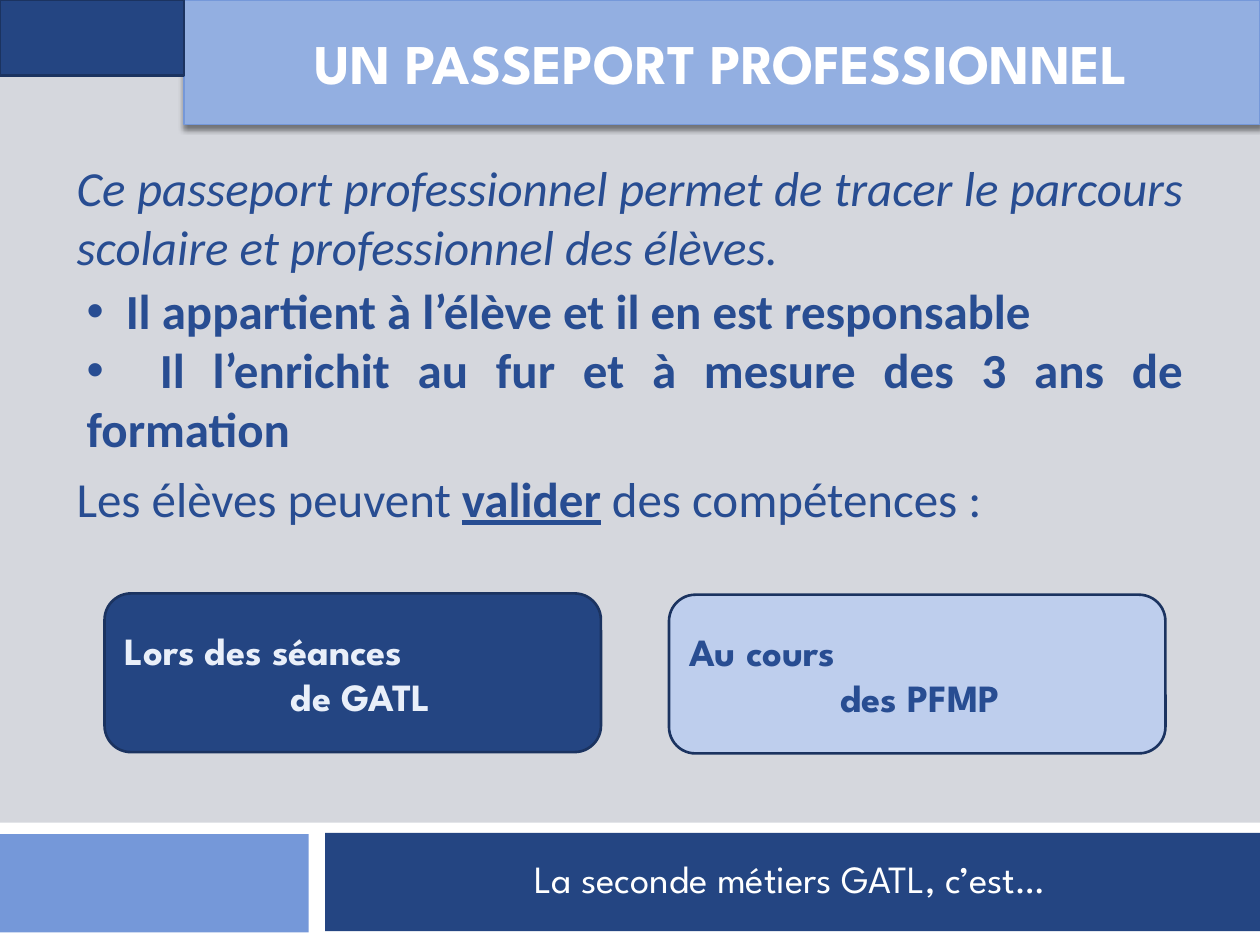
import pptx
import pptx.util
import pptx.dml.color
import pptx.enum.shapes
import pptx.enum.text
import pptx.oxml
import pptx.oxml.ns

RGBColor = pptx.dml.color.RGBColor
Shape = pptx.enum.shapes.MSO_SHAPE
Align = pptx.enum.text.PP_ALIGN
Anchor = pptx.enum.text.MSO_ANCHOR
Pt = pptx.util.Pt
Inches = pptx.util.Inches

WHITE = RGBColor(0xFF, 0xFF, 0xFF)
GREY = RGBColor(0xD5, 0xD7, 0xDD)
NAVY = RGBColor(0x24, 0x45, 0x82)
EDGE = RGBColor(0x1B, 0x33, 0x60)
INK = RGBColor(0x28, 0x4D, 0x92)
BLUE = RGBColor(0x75, 0x98, 0xD9)
SKY = RGBColor(0x93, 0xAF, 0xE1)
PALE = RGBColor(0xBE, 0xCE, 0xED)
MIST = RGBColor(0xE9, 0xEF, 0xF9)

BODY = {"name": "Calibri", "size": Pt(28), "color": INK}
HEAD = {"name": "League Spartan", "size": Pt(32), "color": WHITE, "bold": True}
LABEL = HEAD | {"size": Pt(22)}
FOOT = LABEL | {"bold": False}
NS = pptx.oxml.ns.nsdecls("a")
SHADOW = (f'<a:effectLst {NS}><a:outerShdw blurRad="38100" dist="30480" dir="5400000" rotWithShape="0">'
          '<a:srgbClr val="000000"><a:alpha val="45000"/></a:srgbClr></a:outerShdw></a:effectLst>')


class Deck:
    """Hold the current slide and its style on a grid of 100 columns by 75 rows."""

    def __init__(self):
        self.prs = pptx.Presentation()
        self.prs.slide_width, self.prs.slide_height = Inches(10), Inches(7.5)
        self.slide = self.prs.slides.add_slide(self.prs.slide_layouts[5])
        fill = self.slide.background.fill
        fill.solid()
        fill.fore_color.rgb = GREY

    def grid(self, *cells):
        """Turn columns and rows into lengths."""
        col, row = self.prs.slide_width / 100, self.prs.slide_height / 75
        return [round(n * unit) for n, unit in zip(cells, (col, row, col, row))]

    def paint(self, shape, fill, edge=None, width=1.5):
        """Fill and outline a shape."""
        shape.fill.solid()
        shape.fill.fore_color.rgb = fill
        if edge is None:
            shape.line.fill.background()
        else:
            shape.line.color.rgb = edge
            shape.line.width = Pt(width)

    def block(self, cells, fill, edge=None, kind=Shape.RECTANGLE):
        """Add a flat preset shape."""
        shape = self.slide.shapes.add_shape(kind, *self.grid(*cells))
        shape.shadow.inherit = False
        self.paint(shape, fill, edge)
        return shape

    def style(self, para, runs, align):
        """Add styled runs to a paragraph."""
        para.alignment = align
        for text, form in runs:
            run = para.add_run()
            run.text = text
            for key, value in form.items():
                if key == "color":
                    run.font.color.rgb = value
                else:
                    setattr(run.font, key, value)

    def title(self, cells, text):
        """Format the title placeholder as a banner."""
        shape = self.slide.shapes.title
        shape.left, shape.top, shape.width, shape.height = self.grid(*cells)
        self.paint(shape, SKY, BLUE, 0.79)
        shape._element.spPr.append(pptx.oxml.parse_xml(SHADOW))
        frame = shape.text_frame
        frame.vertical_anchor = Anchor.MIDDLE
        self.style(frame.paragraphs[0], [(text, HEAD)], Align.CENTER)

    def text(self, cells, runs, align=Align.JUSTIFY):
        """Add a wrapped text box with one paragraph."""
        frame = self.slide.shapes.add_textbox(*self.grid(*cells)).text_frame
        frame.word_wrap = True
        self.style(frame.paragraphs[0], runs, align)
        return frame

    def list(self, cells, items):
        """Add bulleted paragraphs, each with its own tab stop."""
        frame = self.text(cells, [])
        for i, (text, stop) in enumerate(items):
            para = frame.add_paragraph() if i else frame.paragraphs[0]
            self.style(para, [("\t" + text, BODY | {"bold": True})], Align.JUSTIFY)
            props = para._p.get_or_add_pPr()
            for xml in ('<a:buFont {} typeface="Arial"/>', '<a:buChar {} char="•"/>',
                        f'<a:tabLst {{}}><a:tab pos="{Inches(stop)}" algn="l"/></a:tabLst>'):
                props.append(pptx.oxml.parse_xml(xml.format(NS)))

    def card(self, cells, fill, color, lines, step):
        """Add a rounded card whose second line is indented."""
        frame = self.block(cells, fill, EDGE, Shape.ROUNDED_RECTANGLE).text_frame
        frame.vertical_anchor = Anchor.MIDDLE
        for i, line in enumerate(lines):
            para = frame.add_paragraph() if i else frame.paragraphs[0]
            self.style(para, [(line, LABEL | {"color": color})], Align.LEFT)
            para._p.get_or_add_pPr().set("marL", str(Inches(step * i)))


def main():
    """Build the slide."""
    deck = Deck()
    for cells, fill in (((0, 65.3, 100, 9.7), WHITE), ((0, 66.2, 24.5, 7.8), BLUE),
                        ((25.8, 66.1, 74.2, 7.8), NAVY)):
        deck.block(cells, fill)
    deck.block((0, 0, 14.6, 6), NAVY, EDGE)
    deck.title((14.6, 0, 85.4, 9.9), "UN PASSEPORT PROFESSIONNEL")
    intro = "Ce passeport professionnel permet de tracer le parcours scolaire et professionnel des élèves."
    frame = deck.text((5.1, 13.9, 89.8, 11), [(intro, BODY | {"italic": True})])
    frame.vertical_anchor = Anchor.MIDDLE
    frame.margin_bottom = Inches(0.5)
    deck.list((5.9, 21.8, 89, 19.9), [
        ("Il appartient à l’élève et il en est responsable", 0.31),
        ("Il l’enrichit au fur et à mesure des 3 ans de formation", 0.58)])
    deck.text((5.1, 36.7, 89, 5.7), [
        ("Les élèves peuvent ", BODY),
        ("valider", BODY | {"bold": True, "underline": True}),
        (" des compétences :", BODY)])
    deck.card((8.3, 47.1, 39.4, 12.6), NAVY, MIST, ("Lors des séances", "de GATL"), 1.32)
    deck.card((53.1, 47.2, 39.4, 12.6), PALE, INK, ("Au cours", "des PFMP"), 1.2)
    deck.text((27.2, 67.4, 70.9, 4.7), [("La seconde métiers GATL, c’est…", FOOT)], Align.CENTER)
    deck.prs.save("out.pptx")


if __name__ == "__main__":
    main()
